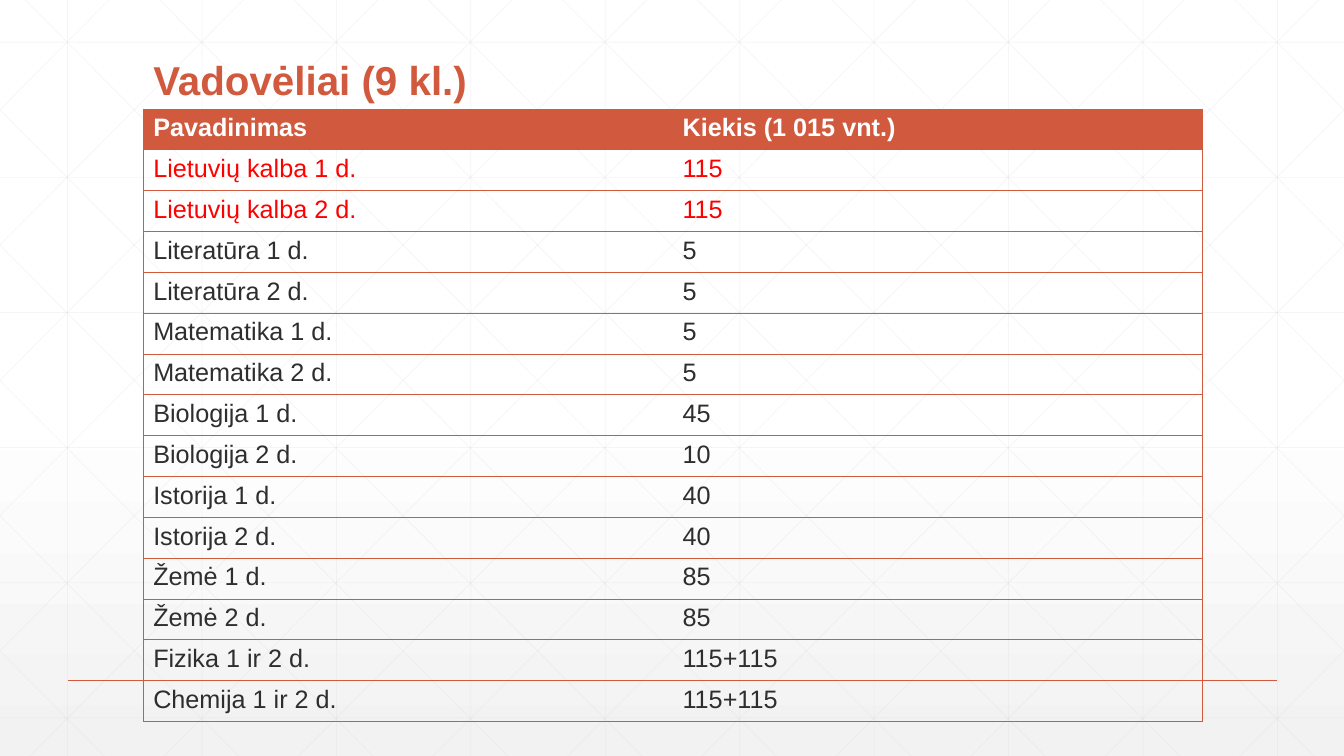
from lxml import etree
from pptx import Presentation
from pptx.dml.color import RGBColor
from pptx.enum.shapes import MSO_CONNECTOR
from pptx.enum.text import MSO_ANCHOR, MSO_AUTO_SIZE, PP_ALIGN
from pptx.oxml.ns import qn
from pptx.util import Inches, Pt

STRAIGHT = MSO_CONNECTOR.STRAIGHT
BOTTOM, LEFT, NO_FIT = MSO_ANCHOR.BOTTOM, PP_ALIGN.LEFT, MSO_AUTO_SIZE.NONE

# Content
TITLE = "Vadovėliai (9 kl.)"
ROWS = [
    ("Pavadinimas", "Kiekis (1 015 vnt.)"),
    ("Lietuvių kalba 1 d.", "115"),
    ("Lietuvių kalba 2 d.", "115"),
    ("Literatūra 1 d.", "5"),
    ("Literatūra 2 d.", "5"),
    ("Matematika 1 d.", "5"),
    ("Matematika 2 d.", "5"),
    ("Biologija 1 d.", "45"),
    ("Biologija 2 d.", "10"),
    ("Istorija 1 d.", "40"),
    ("Istorija 2 d.", "40"),
    ("Žemė 1 d.", "85"),
    ("Žemė 2 d.", "85"),
    ("Fizika 1 ir 2 d.", "115+115"),
    ("Chemija 1 ir 2 d.", "115+115"),
]
RED_ROWS = (1, 2)

# Look
FONT = "Arial"
ACCENT, WHITE, RED, DARK, GRID = "D15A3E", "FFFFFF", "FF0000", "2D2E2D", "D9D9D9"
NO_STYLE_NO_GRID = "{2D5ABB26-0587-4C30-8999-92F81FD0307C}"
W, H = 13.33, 7.5
STEP = 4 / 3
LEAN = 7.45 / H  # horizontal run of a diagonal per inch of height
TABLE_X, TABLE_Y, TABLE_W, TABLE_H = 1.42, 1.08, 10.5, 6.08


def rgb(hex_string):
    return RGBColor.from_string(hex_string)


def write(tf, text, size=18, color=DARK, bold=False):
    p = tf.paragraphs[0]
    p.alignment = LEFT
    r = p.add_run()
    r.text = text
    r.font.name, r.font.size, r.font.bold = FONT, Pt(size), bold
    r.font.color.rgb = rgb(color)
    return p


def add_line(x1, y1, x2, y2, color, width, alpha=None):
    line = s.shapes.add_connector(STRAIGHT, *map(Inches, (x1, y1, x2, y2)))
    line.line.color.rgb = rgb(color)
    line.line.width = Pt(width)
    sp_pr = line._element.spPr
    etree.SubElement(sp_pr, qn("a:effectLst"))
    if alpha:
        clr = next(sp_pr.iter(qn("a:srgbClr")))
        etree.SubElement(clr, qn("a:alpha"), val=str(alpha * 1000))


def add_grid_line(x1, y1, x2, y2):
    add_line(x1, y1, x2, y2, GRID, 0.5, alpha=25)


def add_borders(cell, sides):
    tc_pr = cell._tc.get_or_add_tcPr()
    for side in sides:
        ln = etree.SubElement(tc_pr, qn("a:ln" + side), w=str(Pt(0.5)))
        fill = etree.SubElement(ln, qn("a:solidFill"))
        etree.SubElement(fill, qn("a:srgbClr"), val=ACCENT)


prs = Presentation()
prs.slide_width, prs.slide_height = Inches(W), Inches(H)
s = prs.slides.add_slide(prs.slide_layouts[5])

# Background: white fading to light grey at the bottom
bg = s.background.fill
bg.gradient()
bg.gradient_angle = 270
for stop, (position, color) in zip(bg.gradient_stops, [(0.53, WHITE), (1, "F2F2F2")]):
    stop.position = position
    stop.color.rgb = rgb(color)

# Grid of vertical and horizontal lines
for i in range(10):
    x = 0.67 + i * STEP
    add_grid_line(x, 0, x, H)
for i in range(6):
    y = 0.42 + i * 1.34
    add_grid_line(0, y, W, y)

# Diagonals, clipped to the slide, each with its mirror image
for i in range(-5, 10):
    start = 0.25 + i * STEP
    x1, x2 = max(start, 0), min(start + H * LEAN, W)
    y1, y2 = (x1 - start) / LEAN, (x2 - start) / LEAN
    add_grid_line(x1, y1, x2, y2)
    add_grid_line(W - x1, y1, W - x2, y2)

# Footer rule
add_line(0.67, 6.75, 12.67, 6.75, ACCENT, 1)

# Title, brought in front of the grid
title = s.shapes.title
title.left, title.top = Inches(TABLE_X), Inches(0.55)
title.width, title.height = Inches(TABLE_W), Inches(0.53)
tf = title.text_frame
tf.word_wrap, tf.auto_size, tf.vertical_anchor = True, NO_FIT, BOTTOM
write(tf, TITLE, size=28.8, color=ACCENT, bold=True).line_spacing = 0.9
s.shapes._spTree.append(title._element)

# Table
frame = s.shapes.add_table(len(ROWS), 2, Inches(TABLE_X), Inches(TABLE_Y),
                           Inches(TABLE_W), Inches(TABLE_H))
table = frame.table
table.horz_banding = False
table._tbl.tblPr.find(qn("a:tableStyleId")).text = NO_STYLE_NO_GRID
for i, row in enumerate(ROWS):
    for j, text in enumerate(row):
        cell = table.cell(i, j)
        add_borders(cell, ("R" if j else "L", "T", "B"))
        if i == 0:
            cell.fill.solid()
            cell.fill.fore_color.rgb = rgb(ACCENT)
            write(cell.text_frame, text, color=WHITE, bold=True)
        else:
            cell.fill.background()
            write(cell.text_frame, text, color=RED if i in RED_ROWS else DARK)

prs.save("out.pptx")
